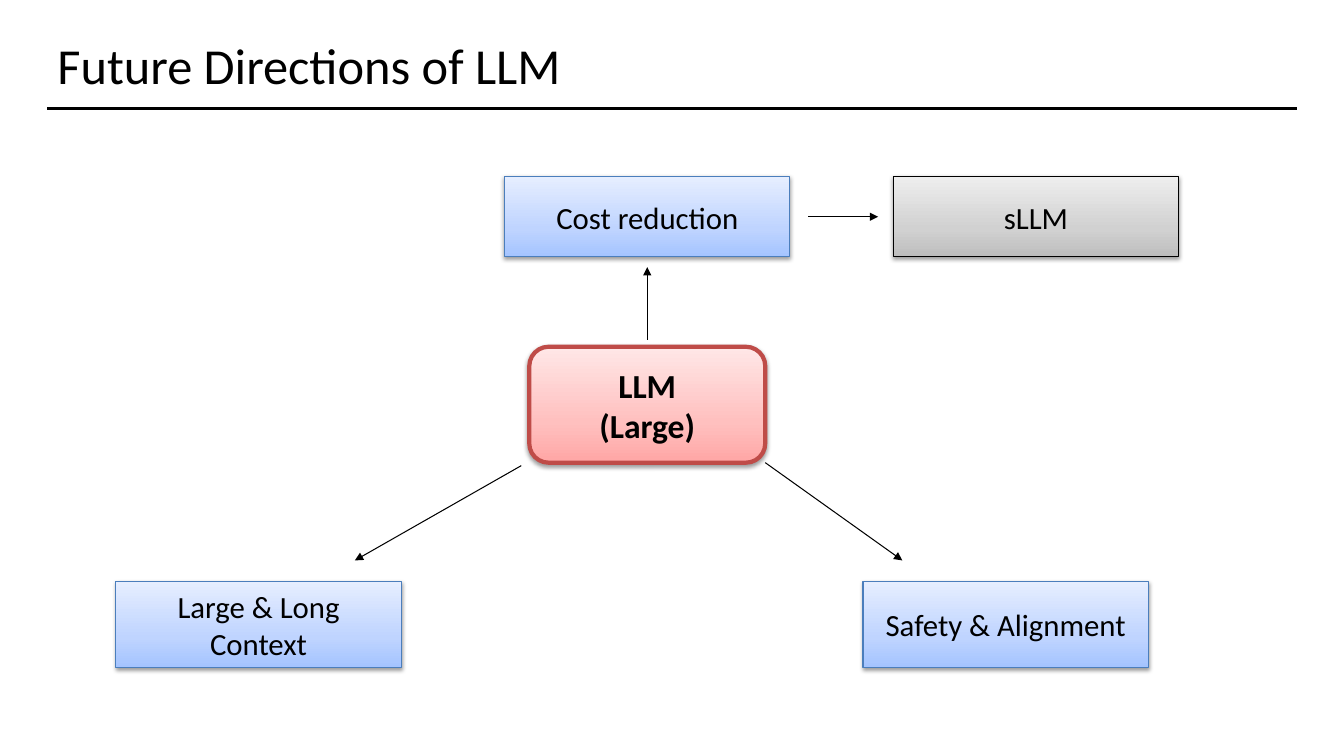
"""Build the slide on future directions of LLM."""
from lxml import etree
from pptx import Presentation, util as u
from pptx.dml.color import RGBColor
from pptx.enum import shapes, text
from pptx.oxml.ns import qn

W, H = 13.33, 7.5
FONT, BLACK = "Calibri", "000000"
TITLE = "Future Directions of LLM"
MARGIN, RULE_Y = 0.47, 1.08

BLUE = (("A4C4FF", "BFD4FF", "E6EEFF"), "4B7EBC", 0.75)
GREY = (("BDBDBD", "D1D1D1", "EEEEEE"), BLACK, 0.75)
RED = (("FFA6A5", "FFC0BF", "FFE7E7"), "BF4C48", 3)
STOPS = (0, 35, 100)

COLS = {"left": 2.565, "hub": 6.42, "right": 9.975, "far": 10.275}
ROWS = {"top": 2.15, "middle": 4.015, "bottom": 6.195}
SIZES = {"top": (2.83, 0.8), "middle": (2.34, 1.15), "bottom": (2.83, 0.85)}

BOXES = {
    "hub": (["LLM", "(Large)"], "hub", "middle", RED),
    "cost": (["Cost reduction"], "hub", "top", BLUE),
    "small": (["sLLM"], "far", "top", GREY),
    "context": (["Large & Long Context"], "left", "bottom", BLUE),
    "safety": (["Safety & Alignment"], "right", "bottom", BLUE),
}

# Each end: box, share of its width and height, offset from that point
ARROWS = [
    (("hub", 0, 1, -0.08, 0.03), ("context", 1, 0, -0.46, -0.21)),
    (("hub", 1, 1, 0, 0), ("safety", 0, 0, 0.39, -0.21)),
    (("hub", 0.5, 0, 0, -0.07), ("cost", 0.5, 1, 0, 0.1)),
    (("cost", 1, 0.5, 0.18, 0), ("small", 0, 0.5, -0.15, 0)),
]


def color(value):
    return RGBColor.from_string(value)


def add(parent, tag, **attrs):
    return etree.SubElement(parent, qn(tag), {k: str(v) for k, v in attrs.items()})


def write(p, words, size, bold=False):
    r = p.add_run()
    r.text = words
    r.font.name, r.font.size, r.font.bold = FONT, u.Pt(size), bold
    r.font.color.rgb = color(BLACK)


def box_frame(name):
    _, col, row, _ = BOXES[name]
    w, h = SIZES[row]
    return COLS[col] - w / 2, ROWS[row] - h / 2, w, h


def add_box(s, name):
    lines, _, _, (grad, edge, weight) = BOXES[name]
    hub = name == "hub"
    kind = shapes.MSO_SHAPE.ROUNDED_RECTANGLE if hub else shapes.MSO_SHAPE.RECTANGLE
    sp = s.shapes.add_shape(kind, *map(u.Inches, box_frame(name)))
    spPr = sp._element.spPr
    fill = add(spPr, "a:gradFill", rotWithShape=1)
    stops = add(fill, "a:gsLst")
    for pos, value in zip(STOPS, grad):
        add(add(stops, "a:gs", pos=pos * 1000), "a:srgbClr", val=value)
    add(fill, "a:lin", ang=270 * 60000, scaled=0)
    sp.line.color.rgb, sp.line.width = color(edge), u.Pt(weight)
    sp.shadow.inherit = False
    shadow = add(spPr.find(qn("a:effectLst")), "a:outerShdw", blurRad=u.Pt(3.1),
                 dist=u.Pt(1.6), dir=90 * 60000, rotWithShape=0)
    add(add(shadow, "a:srgbClr", val=BLACK), "a:alpha", val=38000)
    tf = sp.text_frame
    tf.word_wrap, tf.vertical_anchor = True, text.MSO_ANCHOR.MIDDLE
    for i, words in enumerate(lines):
        p = tf.add_paragraph() if i else tf.paragraphs[0]
        p.alignment = text.PP_ALIGN.CENTER
        write(p, words, 24 if hub else 22, hub)


def add_line(s, start, end, weight, arrow=False):
    line = s.shapes.add_connector(shapes.MSO_CONNECTOR.STRAIGHT,
                                  *map(u.Inches, (*start, *end)))
    line.line.color.rgb, line.line.width = color(BLACK), u.Pt(weight)
    if arrow:
        add(line.line._get_or_add_ln(), "a:tailEnd", type="triangle")
    add(line._element.spPr, "a:effectLst")


def arrow_end(name, share_x, share_y, dx, dy):
    x, y, w, h = box_frame(name)
    return x + share_x * w + dx, y + share_y * h + dy


def main():
    prs = Presentation()
    prs.slide_width, prs.slide_height = u.Inches(W), u.Inches(H)
    s = prs.slides.add_slide(prs.slide_layouts[5])
    title = s.shapes.title
    title.left, title.top = u.Inches(MARGIN), u.Inches(0.14)
    title.width, title.height = u.Inches(W - 2 * MARGIN), u.Inches(0.85)
    tf = title.text_frame
    tf.word_wrap, tf.auto_size = True, text.MSO_AUTO_SIZE.NONE
    tf.vertical_anchor = text.MSO_ANCHOR.BOTTOM
    tf.paragraphs[0].alignment = text.PP_ALIGN.LEFT
    write(tf.paragraphs[0], TITLE, 36)
    add_line(s, (MARGIN, RULE_Y), (W - MARGIN, RULE_Y), 2)
    for name in BOXES:
        add_box(s, name)
    for start, end in ARROWS:
        add_line(s, arrow_end(*start), arrow_end(*end), 0.75, arrow=True)
    prs.save("out.pptx")


if __name__ == "__main__":
    main()
